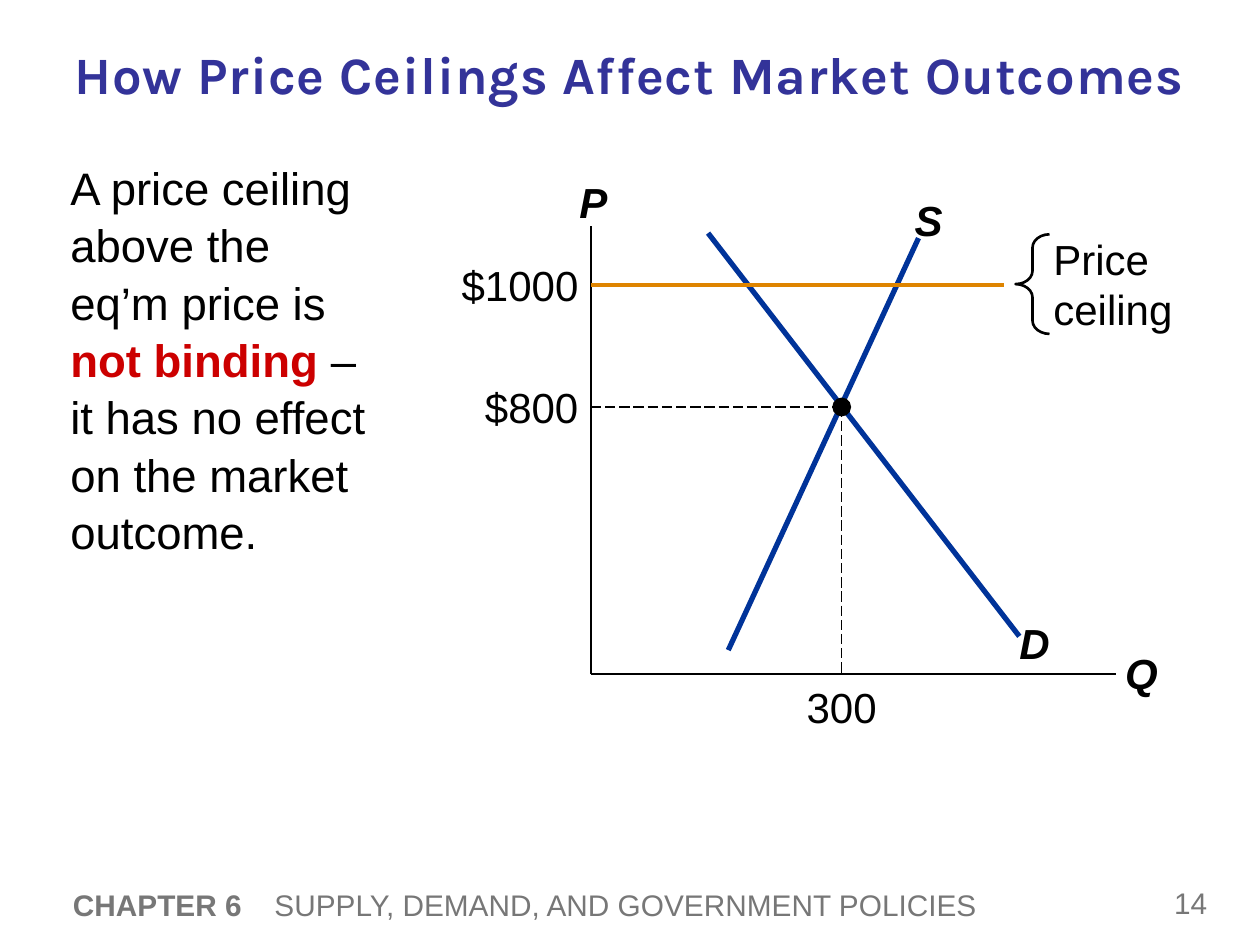
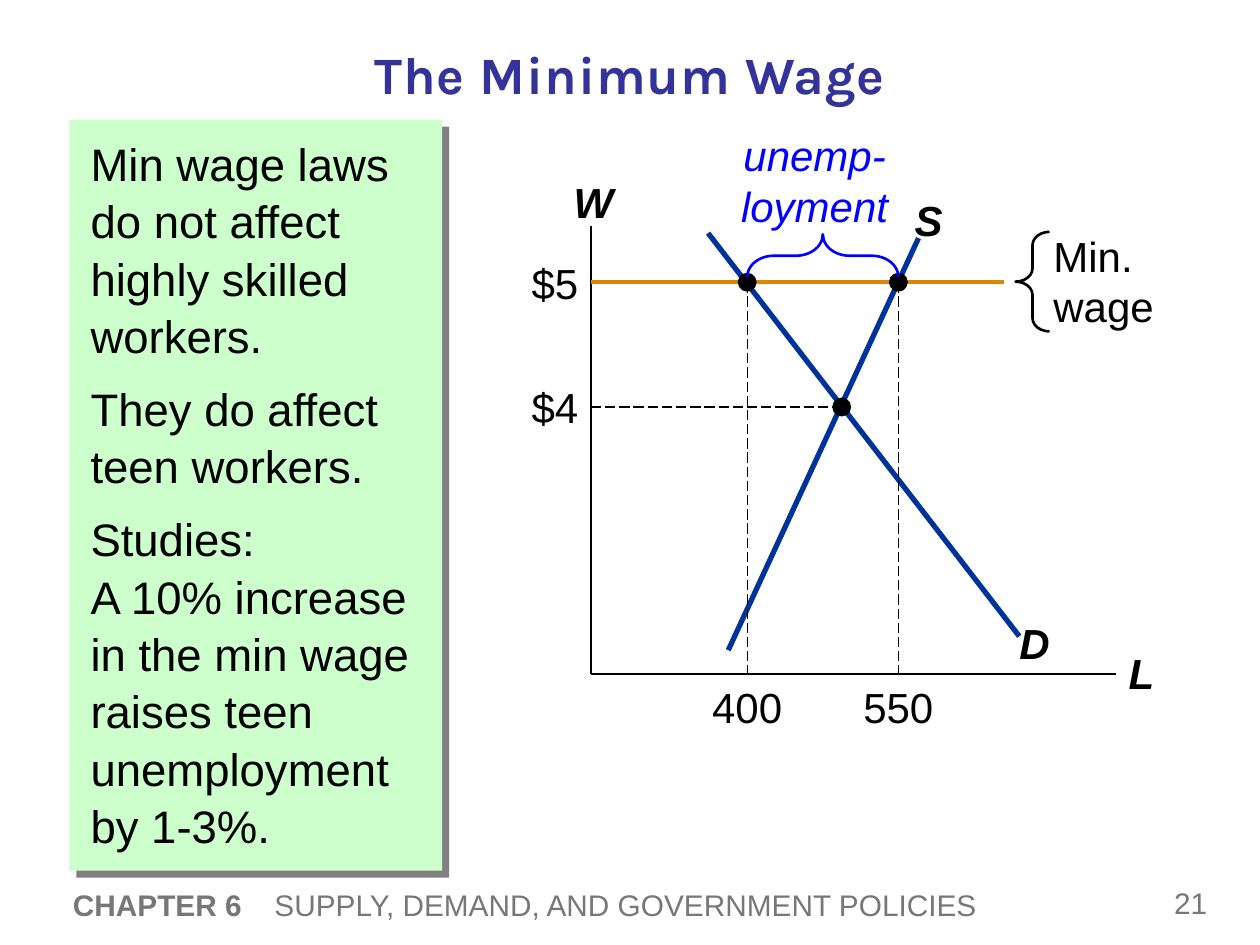
from lxml import etree
from pptx import Presentation
from pptx.dml.color import RGBColor
from pptx.enum.dml import MSO_LINE
from pptx.enum.shapes import MSO_CONNECTOR, MSO_SHAPE
from pptx.enum.text import MSO_ANCHOR, MSO_AUTO_SIZE, PP_ALIGN
from pptx.oxml.ns import qn
from pptx.util import Inches, Pt

STRAIGHT = MSO_CONNECTOR.STRAIGHT
DASH = MSO_LINE.LONG_DASH
BRACE, OVAL, RECT = MSO_SHAPE.LEFT_BRACE, MSO_SHAPE.OVAL, MSO_SHAPE.RECTANGLE
TOP, MIDDLE = MSO_ANCHOR.TOP, MSO_ANCHOR.MIDDLE
LEFT, CENTER, RIGHT = PP_ALIGN.LEFT, PP_ALIGN.CENTER, PP_ALIGN.RIGHT
NO_FIT = MSO_AUTO_SIZE.NONE

COLORS = {
    "title": "333399", "text": "000000", "footer": "777777", "key": "CC0000",
    "curve": "003399", "limit": "DE8400", "gap": "0000FF",
    "panel": "CCFFCC", "shade": "808080",
}
GRAPH = (4.69, 1.79, 4.17, 3.56)
EVEN = (1.99, 1.44)
DOT = 0.15


def rgb(name):
    """Return a named colour."""
    return RGBColor.from_string(COLORS[name])


def add_run(para, text, size, color="text", bold=False, italic=False, face="Arial"):
    """Add one formatted run to a paragraph."""
    run = para.add_run()
    run.text = text
    font = run.font
    font.name, font.size = face, Pt(size)
    font.bold, font.italic = bold, italic
    font.color.rgb = rgb(color)
    return run


def add_box(slide, box, anchor=TOP, align=LEFT, inset=0):
    """Add an empty wrapped text box and return its text frame."""
    frame = slide.shapes.add_textbox(*map(Inches, box)).text_frame
    frame.word_wrap = True
    frame.vertical_anchor = anchor
    frame.margin_left = frame.margin_right = Inches(inset)
    frame.margin_top = frame.margin_bottom = Inches(inset / 2)
    frame.paragraphs[0].alignment = align
    return frame


def add_label(slide, box, text, align=CENTER, **style):
    """Add a graph label."""
    add_run(add_box(slide, box, align=align).paragraphs[0], text, 24, **style)


def add_line(slide, start, end, width, color="text", dash=None):
    """Add a straight line between two points."""
    line = slide.shapes.add_connector(STRAIGHT, *map(Inches, (*start, *end)))
    line.line.color.rgb = rgb(color)
    line.line.width = Pt(width)
    if dash:
        line.line.dash_style = dash
    etree.SubElement(line._element.spPr, qn("a:effectLst"))


def add_solid(slide, kind, box, color):
    """Add a filled shape without outline."""
    shape = slide.shapes.add_shape(kind, *map(Inches, box))
    shape.shadow.inherit = False
    shape.fill.solid()
    shape.fill.fore_color.rgb = rgb(color)
    shape.line.fill.background()
    return shape


def add_brace(slide, box, curve, color="text", turn=0):
    """Add an outlined brace."""
    brace = slide.shapes.add_shape(BRACE, *map(Inches, box))
    brace.shadow.inherit = False
    brace.fill.background()
    brace.line.color.rgb = rgb(color)
    brace.line.width = Pt(1.5)
    brace.adjustments[0] = curve
    brace.rotation = turn


def add_dot(slide, x, y):
    """Add a dot centred on a point."""
    add_solid(slide, OVAL, (x - DOT / 2, y - DOT / 2, DOT, DOT), "text")


def add_frame(deck, title, number):
    """Add a slide with its title, footer and page number."""
    slide = deck.slides.add_slide(deck.slide_layouts[5])
    head = slide.shapes.title
    head.left, head.top, head.width, head.height = map(Inches, (0, 0.23, 10, 0.71))
    frame = head.text_frame
    frame.auto_size, frame.vertical_anchor = NO_FIT, MIDDLE
    frame.paragraphs[0].alignment = CENTER
    run = add_run(frame.paragraphs[0], title, 30, "title", True, face="Karla")
    run.font._element.set("spc", "50")

    para = add_box(slide, (0.48, 6.96, 8.59, 0.44), MIDDLE, inset=0.1).paragraphs[0]
    tabs = etree.SubElement(para._p.get_or_add_pPr(), qn("a:tabLst"))
    etree.SubElement(tabs, qn("a:tab"), pos=str(Inches(1.6)), algn="l")
    add_run(para, "CHAPTER 6", 17, "footer", True)
    add_run(para, "\tSUPPLY, DEMAND, AND GOVERNMENT POLICIES", 17, "footer")

    page = add_box(slide, (9.22, 6.96, 0.67, 0.41), MIDDLE, inset=0.1)
    add_run(page.paragraphs[0], number, 17, "footer")
    return slide


def add_body(slide, box, paras):
    """Add paragraphs of lines, each line a list of text and style pairs."""
    frame = add_box(slide, box, inset=0.1)
    for i, lines in enumerate(paras):
        para = frame.add_paragraph() if i else frame.paragraphs[0]
        para.line_spacing = 1.05
        para.space_before = Pt(9 if i else 0)
        for j, line in enumerate(lines):
            if j:
                para.add_line_break()
            for text, style in line:
                add_run(para, text, 26, **style)


def add_panel(slide, box):
    """Add the tinted panel with its hard shadow."""
    panel = add_solid(slide, RECT, box, "panel")
    effects = panel._element.spPr.find(qn("a:effectLst"))
    shade = etree.SubElement(effects, qn("a:outerShdw"), dist=str(Pt(5.7)),
                             dir="2700000", algn="ctr", rotWithShape="0")
    etree.SubElement(shade, qn("a:srgbClr"), val=COLORS["shade"])


def add_graph(slide, box, axes, price, limit, level, note, drops):
    """Draw axes, both curves, the price limit and the dashed guides."""
    left, top, width, height = box

    def at(x, y):
        return left + x, top + y

    for end in ((0, 0), (width, height)):
        add_line(slide, at(0, height), at(*end), 1)
    add_line(slide, at(0.93, 0.06), at(3.4, 3.26), 3, "curve")
    add_line(slide, at(1.09, 3.37), at(2.6, 0.1), 3, "curve")
    spots = ((0.02, -0.39), (4.37, 3.35), (3.52, 3.11), (2.68, -0.25))
    for text, (x, y) in zip((*axes, "D", "S"), spots):
        add_label(slide, (*at(x - 0.25, y), 0.5, 0.4), text, bold=True, italic=True)

    add_line(slide, at(0, EVEN[1]), at(*EVEN), 0.75, dash=DASH)
    add_line(slide, at(0, level), at(3.28, level), 2.25, "limit")
    for text, y in ((price, EVEN[1]), (limit, level)):
        add_label(slide, (*at(-1.12, y - 0.2), 1.02, 0.4), text, RIGHT)
    add_brace(slide, (*at(3.37, level - 0.4), 0.27, 0.79), 0.39)
    add_label(slide, (*at(3.67, level - 0.41), 1.02, 0.8), note, LEFT)

    for text, x, y in drops:
        add_line(slide, at(x, y), at(x, height), 0.75, dash=DASH)
        add_label(slide, (*at(x - 0.48, 3.62), 0.96, 0.4), text)
    for point in {EVEN, *((x, y) for _, x, y in drops)}:
        add_dot(slide, *at(*point))


def add_gap(slide, box):
    """Mark the surplus of labour above the wage line."""
    left, top = box[:2]
    add_brace(slide, (left + 1.67, top - 0.36, 0.34, 1.2), 0.62, "gap", 90)
    add_label(slide, (left + 1.1, top - 0.76, 1.35, 0.8), "unemp-loyment",
              color="gap", italic=True)


def add_price(deck):
    """Build the price ceiling slide."""
    slide = add_frame(deck, "How Price Ceilings Affect Market Outcomes", "14")
    key = {"color": "key", "bold": True}
    add_body(slide, (0.46, 1.2, 2.83, 5.49), [[
        [("A price ceiling", {})],
        [("above the", {})],
        [("eq’m price is", {})],
        [("not binding", key), (" –", {})],
        [("it has no effect on the market outcome.", {})],
    ]])
    add_graph(slide, GRAPH, "PQ", "$800", "$1000", 0.47, "Price ceiling",
              [("300", *EVEN)])


def add_wage(deck):
    """Build the minimum wage slide."""
    slide = add_frame(deck, "The Minimum Wage", "21")
    add_panel(slide, (0.55, 0.95, 2.96, 5.96))
    paras = (
        ("Min wage laws", "do not affect", "highly skilled workers."),
        ("They do affect teen workers.",),
        ("Studies:", "A 10% increase",
         "in the min wage raises teen unemployment", "by 1-3%."),
    )
    add_body(slide, (0.62, 1.01, 3.01, 5.85),
             [[[(line, {})] for line in lines] for lines in paras])
    level = 0.45
    add_graph(slide, GRAPH, "WL", "$4", "$5", level, "Min. wage",
              [("400", 1.24, level), ("550", 2.44, level)])
    add_gap(slide, GRAPH)


def main():
    """Build and save the deck."""
    deck = Presentation()
    deck.slide_width, deck.slide_height = Inches(10), Inches(7.5)
    add_price(deck)
    add_wage(deck)
    deck.save("out.pptx")


if __name__ == "__main__":
    main()
